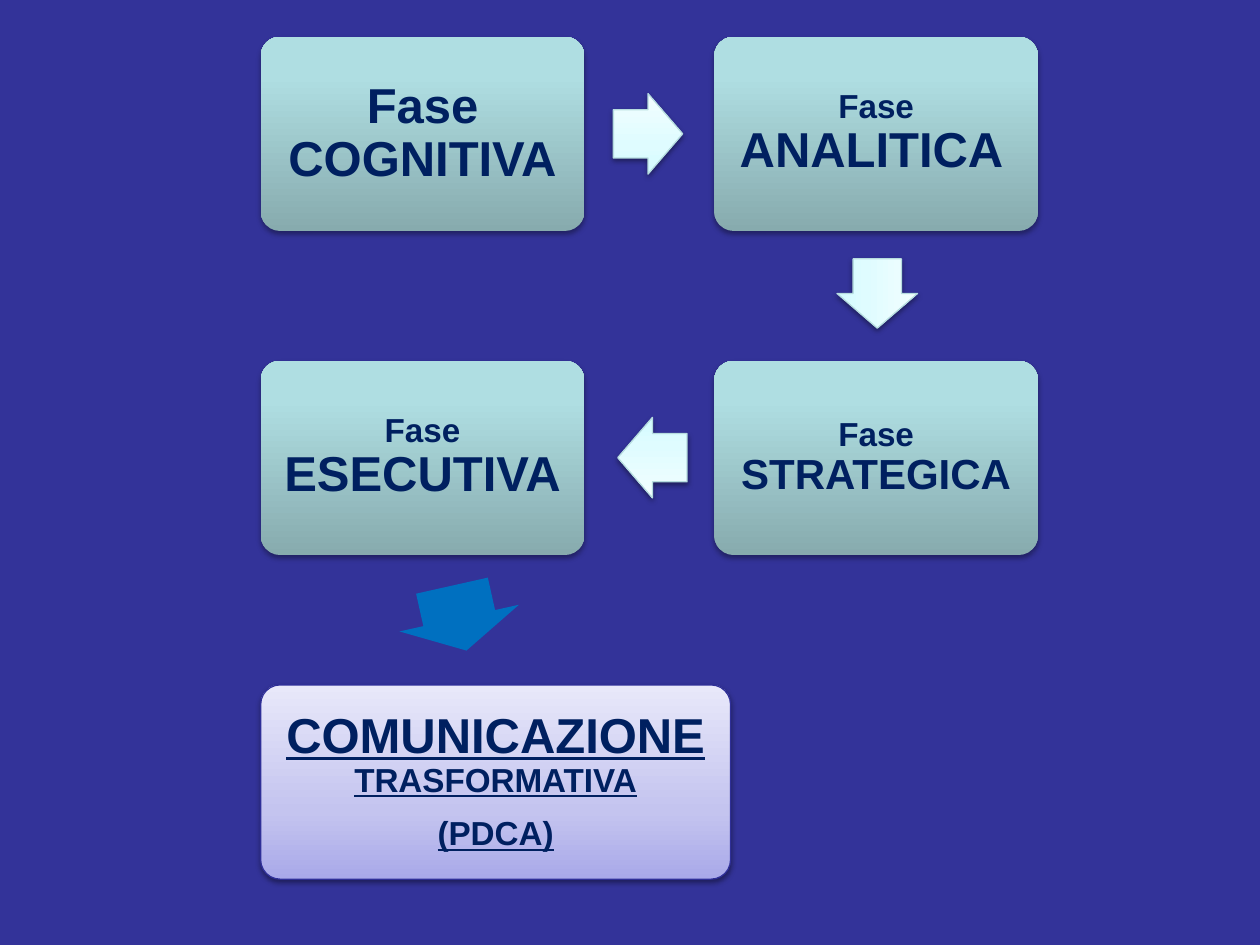
from lxml.etree import SubElement
from pptx import Presentation
from pptx.dml.color import RGBColor
from pptx.enum.shapes import MSO_SHAPE
from pptx.enum.text import MSO_ANCHOR, PP_ALIGN
from pptx.oxml.ns import qn
from pptx.util import Pt

HEX = {
    "back": "333399", "text": "002060", "blue": "0070C0",
    "ice": "B6DCDF", "edge": "2F2F98", "shade": "000000",
}
# Gradient stops, from bottom to top
RAMP = {
    "teal": [(0, "87ABAE"), (80, "AFDEE2"), (100, "AFE0E4")],
    "ice": [(0, "D3FBFF"), (35, "DFFCFF"), (100, "F2FEFF")],
    "lilac": [(0, "A9A9E9"), (35, "C4C4EF"), (100, "E8E8FA")],
}
FONT = {"name": "Arial", "bold": True}
PARA = {"alignment": PP_ALIGN.CENTER, "line_spacing": 0.9, "space_after": Pt(10)}

# Grid of boxes
LEFT, TOP = 149, 21
WIDE, HIGH = 185, 111
STEP_X, STEP_Y = 259.2, 185.2


def apply(item, values):
    for key, value in values.items():
        setattr(item, key, value)


def color(name):
    return RGBColor.from_string(HEX[name])


def add(parent, tag, **attrs):
    return SubElement(parent, qn(tag), {k: str(v) for k, v in attrs.items()})


def blend(shape, name):
    """Fill with a vertical gradient."""
    shape.fill.gradient()
    grad = shape.element.spPr.find(qn("a:gradFill"))
    for child in list(grad):
        grad.remove(child)
    stops = add(grad, "a:gsLst")
    for place, tone in RAMP[name]:
        stop = add(stops, "a:gs", pos=place * 1000)
        add(stop, "a:srgbClr", val=tone)
    add(grad, "a:lin", ang=270 * 60000, scaled=0)


def shade(shape, alpha, dist):
    """Cast a soft shadow downwards."""
    effect = shape.element.spPr.find(qn("a:effectLst"))
    cast = add(effect, "a:outerShdw", blurRad=Pt(3.1), dist=Pt(dist),
               dir=90 * 60000, rotWithShape=0)
    tone = add(cast, "a:srgbClr", val=HEX["shade"])
    add(tone, "a:alpha", val=alpha * 1000)


def draw(slide, kind, area, ramp=None, line=None):
    shape = slide.shapes.add_shape(kind, *map(Pt, area))
    shape.shadow.inherit = False
    if ramp:
        blend(shape, ramp)
        shade(shape, *((38, 1.6) if line else (35, 1.8)))
    if line:
        shape.line.color.rgb = color(line)
        shape.line.width = Pt(0.75)
    else:
        shape.line.fill.background()
    return shape


def box(slide, col, row, paras, wide=WIDE, ramp="teal", line=None, inset=6, under=None):
    area = LEFT + col * STEP_X, TOP + row * STEP_Y, wide, HIGH
    shape = draw(slide, MSO_SHAPE.ROUNDED_RECTANGLE, area, ramp, line)
    shape.adjustments[0] = 0.1
    frame = shape.text_frame
    sides = ("left", "top", "right", "bottom")
    apply(frame, {f"margin_{side}": Pt(inset) for side in sides})
    apply(frame, {"word_wrap": True, "vertical_anchor": MSO_ANCHOR.MIDDLE})
    for i, runs in enumerate(paras):
        para = frame.add_paragraph() if i else frame.paragraphs[0]
        apply(para, PARA)
        for text, size in runs:
            run = para.add_run()
            run.text = text
            apply(run.font, {**FONT, "size": Pt(size), "underline": under})
            run.font.color.rgb = color("text")


def arrow(slide, area, turn, ramp=None, line=None):
    shape = draw(slide, MSO_SHAPE.RIGHT_ARROW, area, ramp, line)
    shape.adjustments[0] = 0.6
    shape.adjustments[1] = 0.5
    shape.rotation = turn
    if not ramp:
        shape.fill.solid()
        shape.fill.fore_color.rgb = color("blue")


def main():
    deck = Presentation()
    apply(deck, {"slide_width": Pt(720), "slide_height": Pt(540)})
    slide = deck.slides.add_slide(deck.slide_layouts[6])
    slide.background.fill.solid()
    slide.background.fill.fore_color.rgb = color("back")

    # The four phases, clockwise
    box(slide, 0, 0, [[("Fase COGNITIVA", 28)]], inset=8.5)
    box(slide, 1, 0, [[("Fase ", 19), ("ANALITICA", 28), (" ", 19)]])
    box(slide, 1, 1, [[("Fase ", 19), ("STRATEGICA", 24)]])
    box(slide, 0, 1, [[("Fase ", 19), ("ESECUTIVA", 28)]])

    # Arrows between the phases
    for x, y, turn in ((350.5, 53.5, 0), (481.5, 144.7, 90), (353, 238.5, 180)):
        arrow(slide, (x, y, 39.6, 46), turn, "ice", "ice")

    # Outcome
    arrow(slide, (243.4, 318.2, 38, 70), 77.4)
    box(slide, 0, 2, [[("COMUNICAZIONE", 28), (" TRASFORMATIVA", 19)], [("(PDCA)", 19)]],
        wide=268.5, ramp="lilac", line="edge", inset=8.5, under=True)

    deck.save("out.pptx")


if __name__ == "__main__":
    main()
